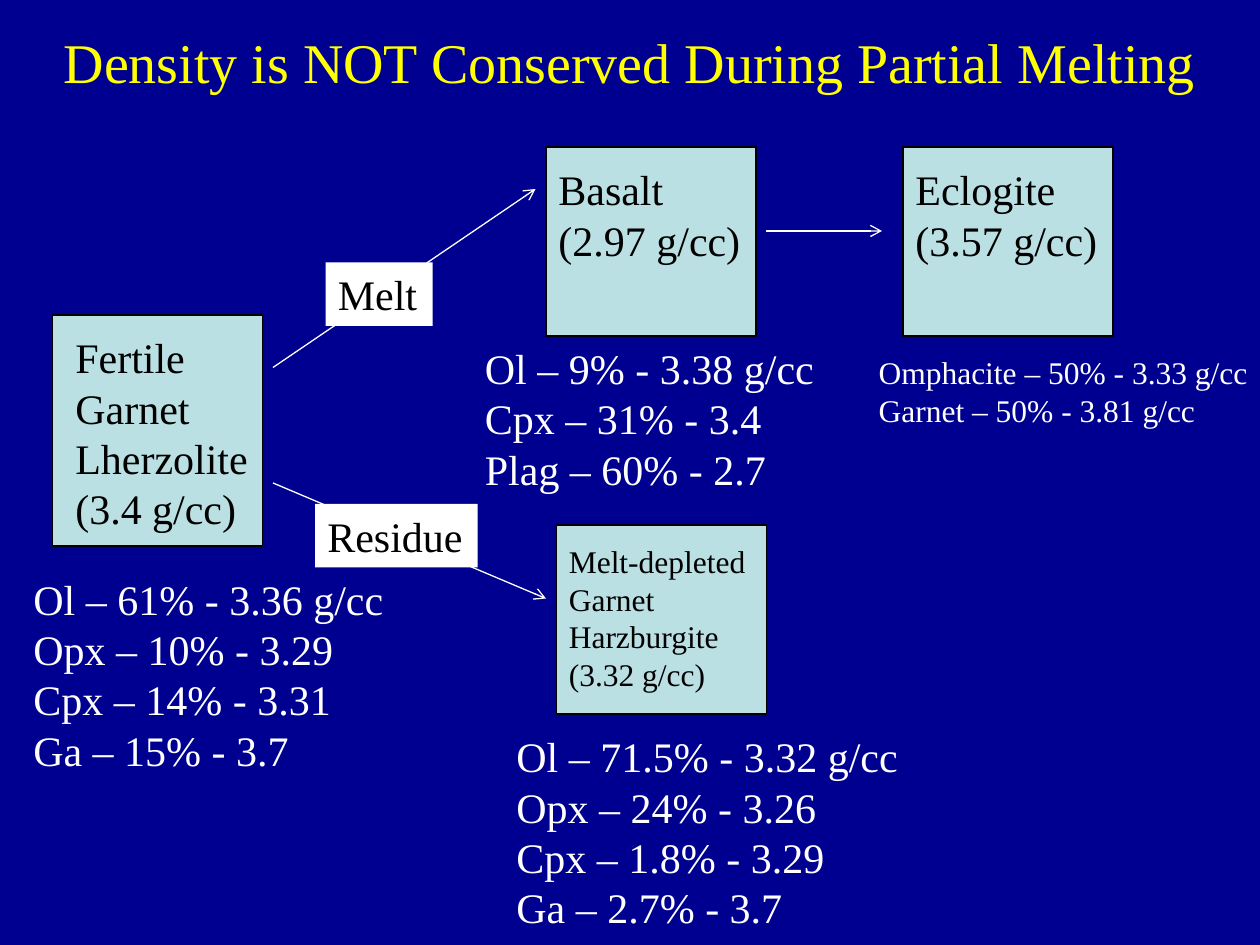
from lxml import etree
from pptx import Presentation
from pptx import util as u
from pptx.dml.color import RGBColor
from pptx.enum import shapes, text
from pptx.oxml.ns import qn

COLUMNS, ROWS = 120, 90  # twelve grid cells to the inch
CELL = u.Inches(10) // COLUMNS
FONT = "Times New Roman"
COLORS = {
    "background": "000090",
    "rock": "BBE0E3",
    "dark": "000000",
    "light": "FFFFFF",
    "title": "FFFF00",
}

# column, row, height of the box; text offset, text width, size; lines
ROCKS = [
    (5, 30, 22, 1, 19, 24, ["Fertile", "Garnet", "Lherzolite", "(3.4 g/cc)"]),
    (53, 50, 18, 0, 19.5, 18,
     ["Melt-depleted", "Garnet", "Harzburgite", "(3.32 g/cc)"]),
    (52, 14, 18, 0, 20, 24, ["Basalt", "(2.97 g/cc)"]),
    (86, 14, 18, 0, 20, 24, ["Eclogite", "(3.57 g/cc)"]),
]
# column, row, width, size, lines
MINERALS = [
    (2, 54, 36, 24, ["Ol – 61% - 3.36 g/cc", "Opx – 10% - 3.29",
                     "Cpx – 14% - 3.31", "Ga – 15% - 3.7"]),
    (48, 69, 39, 24, ["Ol – 71.5% - 3.32 g/cc", "Opx – 24% - 3.26",
                      "Cpx – 1.8% - 3.29", "Ga – 2.7% - 3.7"]),
    (45, 32, 34, 24, ["Ol – 9% - 3.38 g/cc", "Cpx – 31% - 3.4",
                      "Plag – 60% - 2.7"]),
    (82.5, 33, 38, 18, ["Omphacite – 50% - 3.33 g/cc",
                        "Garnet – 50% - 3.81 g/cc"]),
]
ARROWS = [(26, 35, 51, 18), (26, 46, 52, 57), (73, 22, 84, 22)]
# column, row, width, wording
LABELS = [(31, 25, 10.2, "Melt"), (30, 48, 15.5, "Residue")]


def color(name):
    return RGBColor.from_string(COLORS[name])


def grid(*cells):
    return [round(cell * CELL) for cell in cells]


def add_text(slide, column, row, width, size, lines, ink, wrap=False):
    """Add a text box whose height follows from its lines."""
    left, top, box_width = grid(column, row, width)
    height = u.Inches(0.1) + u.Pt(round(len(lines) * size * 1.21, 2))
    box = slide.shapes.add_textbox(left, top, box_width, height)
    frame = box.text_frame
    frame.text = "\n".join(lines)
    frame.word_wrap = wrap
    frame.auto_size = text.MSO_AUTO_SIZE.SHAPE_TO_FIT_TEXT
    for paragraph in frame.paragraphs:
        paragraph.font.name = FONT
        paragraph.font.size = u.Pt(size)
        paragraph.font.color.rgb = color(ink)
    return box


def add_title(slide, wording):
    box = add_text(slide, 0, 2, COLUMNS, 32, [wording], "title", wrap=True)
    box.text_frame.paragraphs[0].alignment = text.PP_ALIGN.CENTER


def add_rock(slide, column, row, height, offset, width, size, lines):
    box = slide.shapes.add_shape(shapes.MSO_SHAPE.RECTANGLE,
                                 *grid(column, row, 20, height))
    box.shadow.inherit = False
    box.fill.solid()
    box.fill.fore_color.rgb = color("rock")
    box.line.color.rgb = color("dark")
    box.line.width = u.Pt(0.75)
    add_text(slide, column + offset, row + 1, width, size, lines, "dark")


def add_arrow(slide, *ends):
    arrow = slide.shapes.add_connector(shapes.MSO_CONNECTOR.STRAIGHT,
                                       *grid(*ends))
    arrow.line.color.rgb = color("light")
    arrow.line.width = u.Pt(0.75)
    etree.SubElement(arrow.line._get_or_add_ln(), qn("a:tailEnd"), type="arrow")
    etree.SubElement(arrow._element.spPr, qn("a:effectLst"))


def add_label(slide, column, row, width, wording):
    label = add_text(slide, column, row, width, 24, [wording], "dark")
    label.fill.solid()
    label.fill.fore_color.rgb = color("light")


def main():
    presentation = Presentation()
    presentation.slide_width, presentation.slide_height = grid(COLUMNS, ROWS)
    slide = presentation.slides.add_slide(presentation.slide_layouts[6])
    slide.background.fill.solid()
    slide.background.fill.fore_color.rgb = color("background")

    add_title(slide, "Density is NOT Conserved During Partial Melting")
    for rock in ROCKS:
        add_rock(slide, *rock)
    for column, row, width, size, lines in MINERALS:
        add_text(slide, column, row, width, size, lines, "light")
    for ends in ARROWS:
        add_arrow(slide, *ends)
    for label in LABELS:
        add_label(slide, *label)
    presentation.save("out.pptx")


if __name__ == "__main__":
    main()
